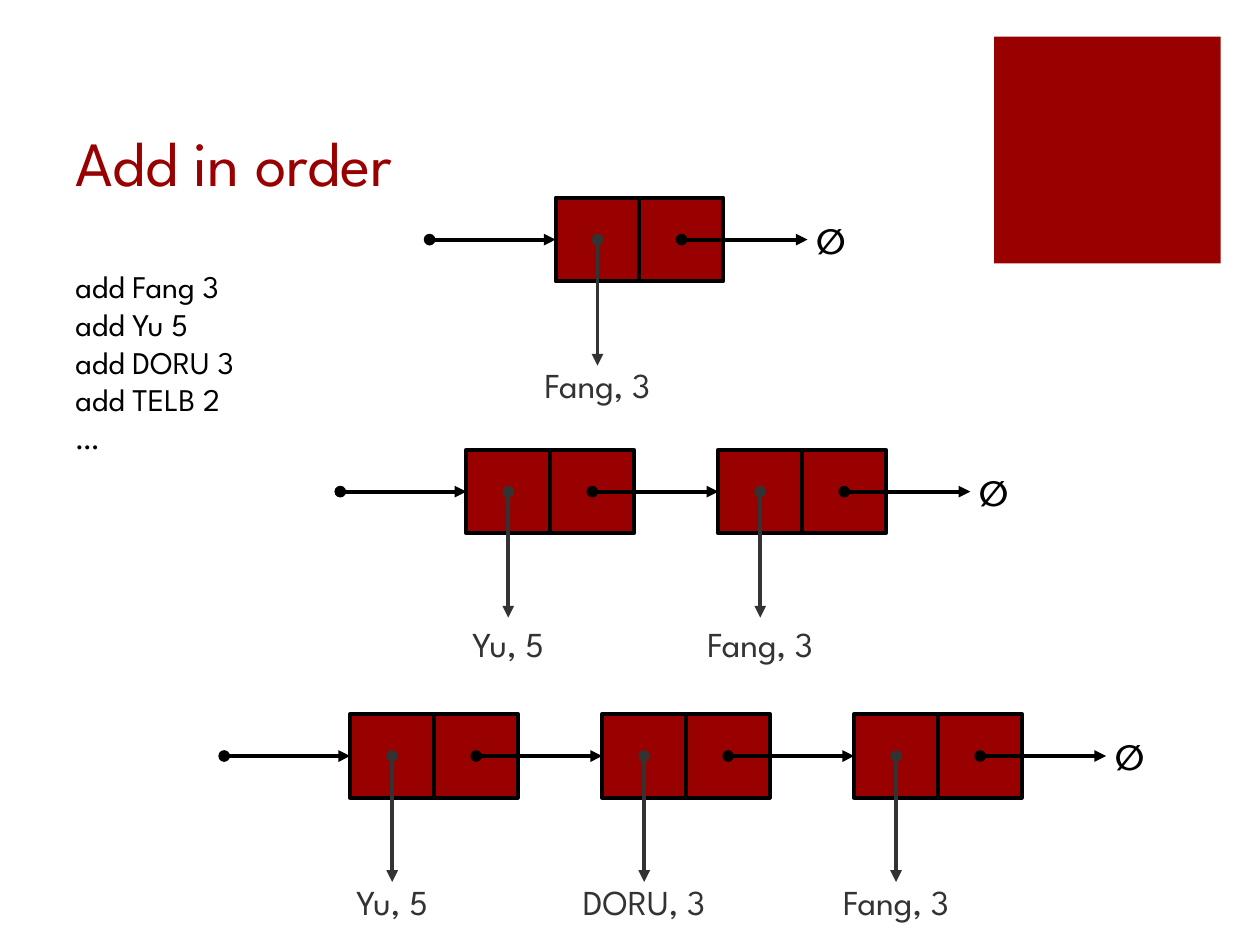
from lxml import etree
from pptx import Presentation
from pptx import util as u
from pptx.dml.color import RGBColor
from pptx.enum import shapes, text
from pptx.oxml import ns

FONT = "League Spartan"
RED, BLACK, GRAY = "990000", "000000", "333333"
LINE_WIDTH = u.Pt(2.25)
CELL = 1.69
ARROW = 2.54
PITCH = 2 * ARROW
LABEL_WIDTHS = {"Fang, 3": 3.05, "Yu, 5": 2.1, "DORU, 3": 3.45}


def add_text(left, top, width, height, lines, size, color,
             align=text.PP_ALIGN.LEFT, bold=False, wrap=False,
             anchor=text.MSO_ANCHOR.TOP):
    box = slide.shapes.add_textbox(u.Cm(left), u.Cm(top), u.Cm(width), u.Cm(height))
    frame = box.text_frame
    frame.word_wrap = wrap
    frame.vertical_anchor = anchor
    for index, line in enumerate(lines):
        paragraph = frame.paragraphs[0] if index == 0 else frame.add_paragraph()
        paragraph.alignment = align
        run = paragraph.add_run()
        run.text = line
        run.font.name = FONT
        run.font.size = u.Pt(size)
        run.font.bold = bold
        run.font.color.rgb = RGBColor.from_string(color)


def add_pointer(x, y, dx, dy, color):
    """Draw an arrow with a round start from (x, y), dx across and dy down."""
    connector = slide.shapes.add_connector(
        shapes.MSO_CONNECTOR.STRAIGHT, u.Cm(x), u.Cm(y), u.Cm(x + dx), u.Cm(y + dy))
    connector.line.width = LINE_WIDTH
    connector.line.color.rgb = RGBColor.from_string(color)
    line = connector.line._get_or_add_ln()
    etree.SubElement(line, ns.qn("a:headEnd"), type="oval")
    etree.SubElement(line, ns.qn("a:tailEnd"), type="triangle")
    etree.SubElement(connector._element.spPr, ns.qn("a:effectLst"))


presentation = Presentation()
presentation.slide_width = u.Cm(25.4)
presentation.slide_height = u.Cm(19.05)
slide = presentation.slides.add_slide(presentation.slide_layouts[6])

square = slide.shapes.add_shape(
    shapes.MSO_SHAPE.RECTANGLE, u.Cm(20.04), u.Cm(0.74), u.Cm(4.57), u.Cm(4.57))
square.shadow.inherit = False
square.fill.solid()
square.fill.fore_color.rgb = RGBColor.from_string(RED)
square.line.fill.background()

add_text(1.27, 0.97, 18.08, 3.17, ["Add in order"], 36, RED,
         wrap=True, anchor=text.MSO_ANCHOR.BOTTOM)
add_text(1.27, 5.26, 4.47, 4.11,
         ["add Fang 3", "add Yu 5", "add DORU 3", "add TELB 2", "…"], 18, BLACK)

# Each linked list: start of the head pointer, its height, top of the labels, values
linked_lists = [
    (8.66, 4.83, 7.21, ["Fang, 3"]),
    (6.86, 9.91, 12.42, ["Yu, 5", "Fang, 3"]),
    (4.52, 15.24, 17.63, ["Yu, 5", "DORU, 3", "Fang, 3"]),
]
for start, middle, label_top, values in linked_lists:
    add_pointer(start, middle, ARROW, 0, BLACK)
    for index, value in enumerate(values):
        node_left = start + ARROW + index * PITCH
        for cell_left in (node_left, node_left + CELL):
            cell = slide.shapes.add_shape(
                shapes.MSO_SHAPE.RECTANGLE, u.Cm(cell_left), u.Cm(middle - CELL / 2),
                u.Cm(CELL), u.Cm(CELL))
            cell.shadow.inherit = False
            cell.fill.solid()
            cell.fill.fore_color.rgb = RGBColor.from_string(RED)
            cell.line.color.rgb = RGBColor.from_string(BLACK)
            cell.line.width = LINE_WIDTH
        value_x = node_left + CELL / 2
        add_pointer(node_left + ARROW, middle, ARROW, 0, BLACK)
        width = LABEL_WIDTHS[value]
        add_text(value_x - width / 2, label_top, width, 1.12, [value], 20, GRAY,
                 align=text.PP_ALIGN.CENTER)
        add_pointer(value_x, middle, 0, ARROW, GRAY)
    list_end = start + ARROW + len(values) * PITCH
    add_text(list_end - 0.08, middle - 0.53, 1.09, 1.09, ["∅"], 20, BLACK,
             align=text.PP_ALIGN.CENTER, bold=True)

presentation.save("out.pptx")
